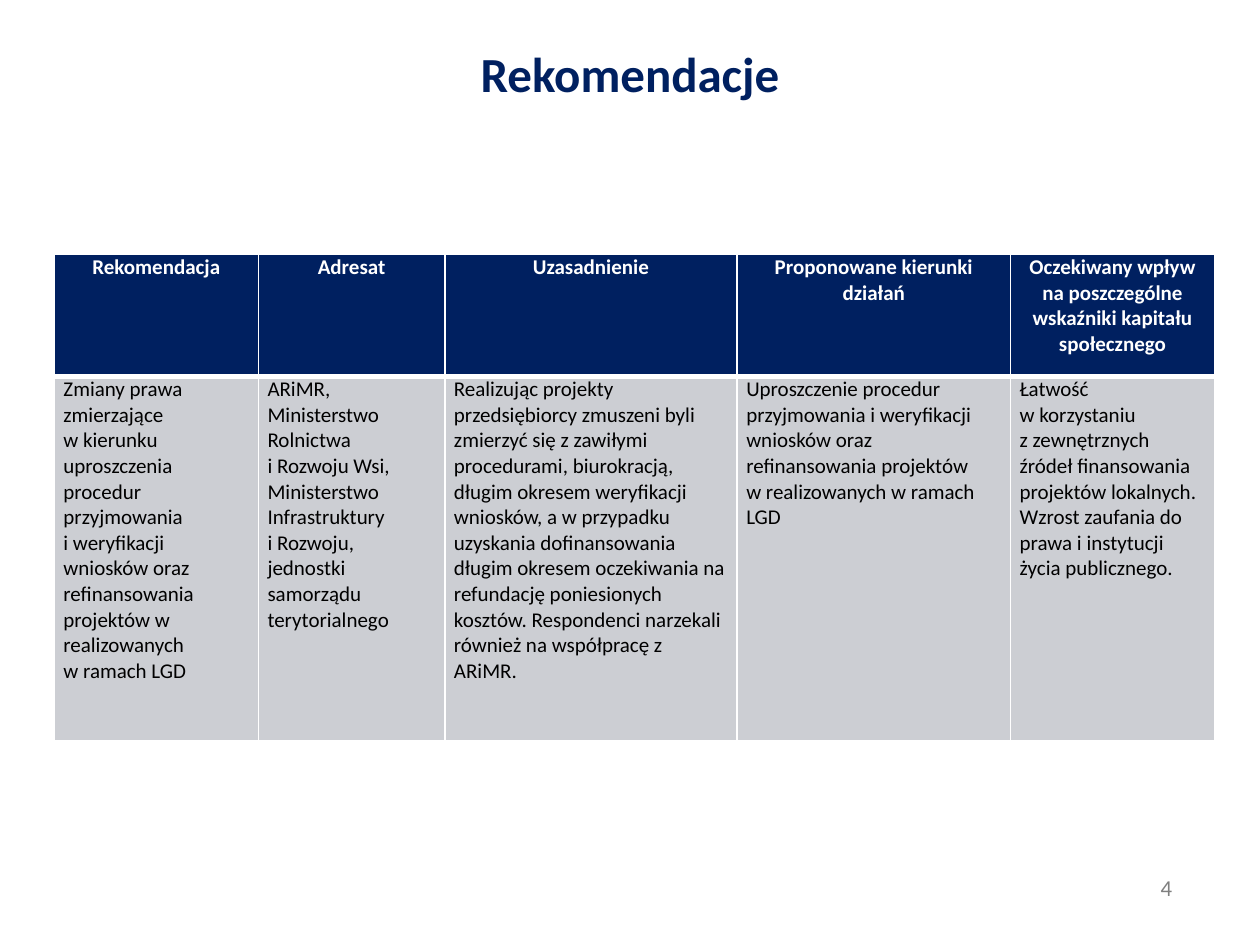
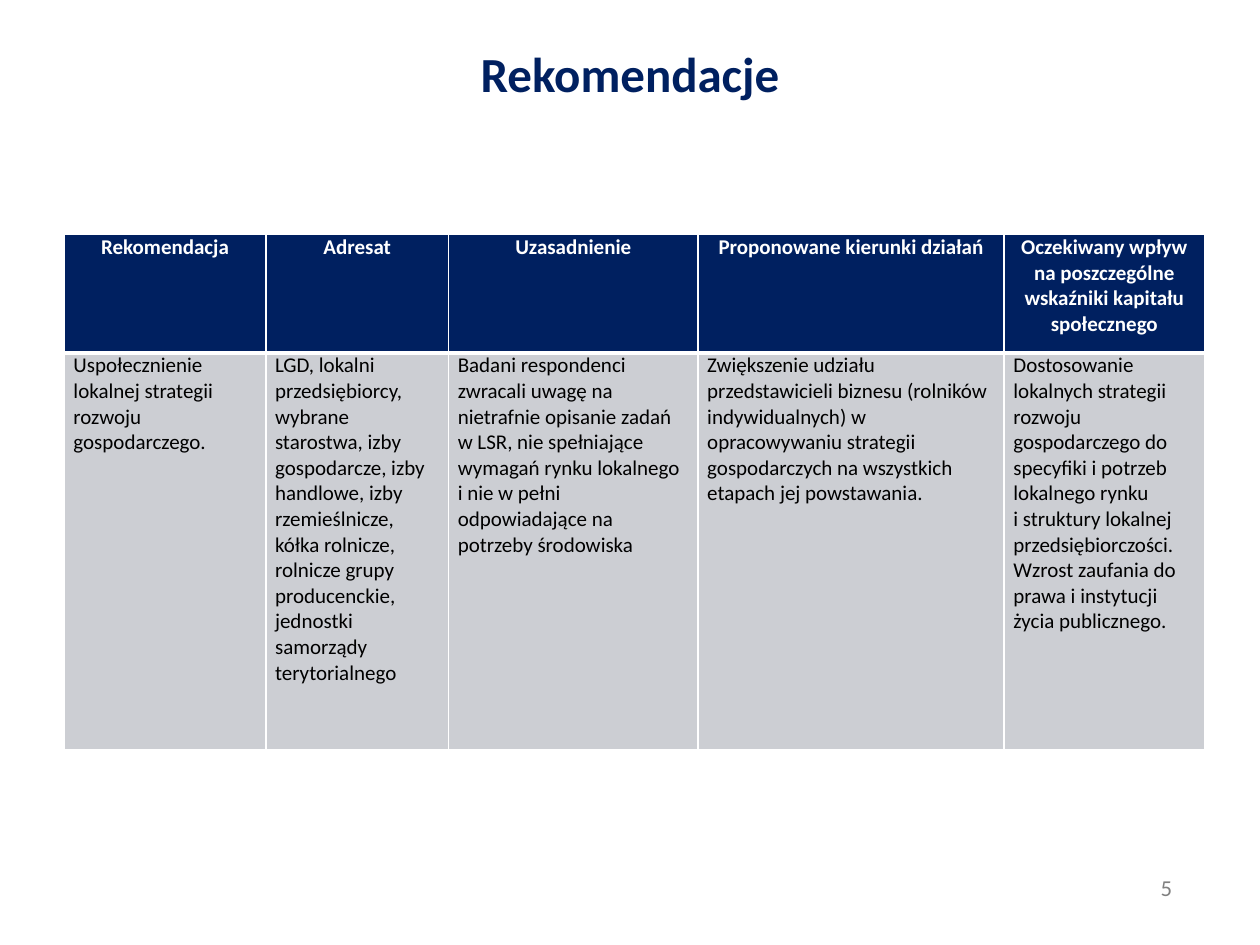
from pptx import Presentation
from pptx.util import Pt
from pptx.dml.color import RGBColor as Rgb
from pptx.enum.text import PP_ALIGN as Align, MSO_ANCHOR as Anchor
from pptx.oxml import parse_xml as to_xml
from pptx.oxml.ns import nsdecls

HUES = {"navy": "002060", "grey": "CCCED3", "white": "FFFFFF", "black": "000000", "page": "808080"}
FACE = "Calibri"
HEADS = [
    "Rekomendacja",
    "Adresat",
    "Uzasadnienie",
    "Proponowane kierunki działań",
    "Oczekiwany wpływ na poszczególne wskaźniki kapitału społecznego",
]
SLIDES = [
    {
        "page": "4",
        "spot": (31, 145.5),
        "cols": [116.64, 106.56, 167.04, 156.24, 116.64],
        "rows": [69.84, 208.08],
        "body": [
            "Zmiany prawa zmierzające\nw kierunku uproszczenia procedur przyjmowania\ni weryfikacji wniosków oraz refinansowania projektów w realizowanych\nw ramach LGD",
            "ARiMR, Ministerstwo Rolnictwa\ni Rozwoju Wsi, Ministerstwo Infrastruktury\ni Rozwoju, jednostki samorządu terytorialnego",
            "Realizując projekty przedsiębiorcy zmuszeni byli zmierzyć się z zawiłymi procedurami, biurokracją, długim okresem weryfikacji wniosków, a w przypadku uzyskania dofinansowania długim okresem oczekiwania na refundację poniesionych kosztów. Respondenci narzekali również na współpracę z ARiMR.",
            "Uproszczenie procedur przyjmowania i weryfikacji wniosków oraz refinansowania projektów\nw realizowanych w ramach LGD",
            "Łatwość\nw korzystaniu\nz zewnętrznych źródeł finansowania projektów lokalnych. Wzrost zaufania do prawa i instytucji życia publicznego.",
        ],
    },
    {
        "page": "5",
        "spot": (36.75, 134),
        "cols": [115.2, 104.4, 142.56, 174.96, 114.48],
        "rows": [67.68, 226.8],
        "body": [
            "Uspołecznienie lokalnej strategii rozwoju gospodarczego.",
            "LGD, lokalni przedsiębiorcy, wybrane starostwa, izby gospodarcze, izby handlowe, izby rzemieślnicze, kółka rolnicze, rolnicze grupy producenckie, jednostki samorządy terytorialnego",
            "Badani respondenci zwracali uwagę na nietrafnie opisanie zadań w LSR, nie spełniające wymagań rynku lokalnego i nie w pełni odpowiadające na potrzeby środowiska",
            "Zwiększenie udziału przedstawicieli biznesu (rolników indywidualnych) w opracowywaniu strategii gospodarczych na wszystkich etapach jej powstawania.",
            "Dostosowanie lokalnych strategii rozwoju gospodarczego do specyfiki i potrzeb lokalnego rynku\ni struktury lokalnej przedsiębiorczości. Wzrost zaufania do prawa i instytucji życia publicznego.",
        ],
    },
]


def write(frame, text, size, hue, bold=False, align=Align.CENTER):
    frame.word_wrap = True
    para = frame.paragraphs[0]
    para.text = text
    para.alignment = align
    font = para.font
    font.name, font.size, font.bold = FACE, Pt(size), bold
    font.color.rgb = Rgb.from_string(HUES[hue])
    return para


def edge(cell, widths):
    props = cell._tc.get_or_add_tcPr()
    for i, (side, width) in enumerate(zip("LRTB", widths)):
        props.insert(i, to_xml(
            f'<a:ln{side} {nsdecls("a")} w="{Pt(width)}"><a:solidFill>'
            f'<a:srgbClr val="{HUES["white"]}"/></a:solidFill></a:ln{side}>'))


deck = Presentation()
deck.slide_width, deck.slide_height = Pt(720), Pt(540)

for data in SLIDES:
    slide = deck.slides.add_slide(deck.slide_layouts[6])
    shapes = slide.shapes

    foot = shapes.add_textbox(Pt(638), Pt(495.5), Pt(57), Pt(23)).text_frame
    foot.vertical_anchor = Anchor.MIDDLE
    write(foot, data["page"], 13, "page")

    left, top = data["spot"]
    cols, rows = data["cols"], data["rows"]
    grid = shapes.add_table(2, len(cols), Pt(left), Pt(top), Pt(sum(cols)), Pt(sum(rows))).table
    for col, width in zip(grid.columns, cols):
        col.width = Pt(width)
    for row, height in zip(grid.rows, rows):
        row.height = Pt(height)

    looks = [
        (HEADS, "navy", "white", True, Align.CENTER, (1, 1, 1, 3)),
        (data["body"], "grey", "black", False, Align.LEFT, (1, 1, 3, 1)),
    ]
    for row, (texts, back, ink, bold, align, widths) in zip(grid.rows, looks):
        for cell, text in zip(row.cells, texts):
            cell.margin_left = cell.margin_right = Pt(5.25)
            cell.margin_top = cell.margin_bottom = 0
            cell.fill.solid()
            cell.fill.fore_color.rgb = Rgb.from_string(HUES[back])
            edge(cell, widths)
            write(cell.text_frame, text, 12, ink, bold, align).space_after = Pt(8)

    title = shapes.add_textbox(Pt(36), Pt(21.6), Pt(648), Pt(67)).text_frame
    write(title, "Rekomendacje", 28, "navy", True)

deck.save("out.pptx")
